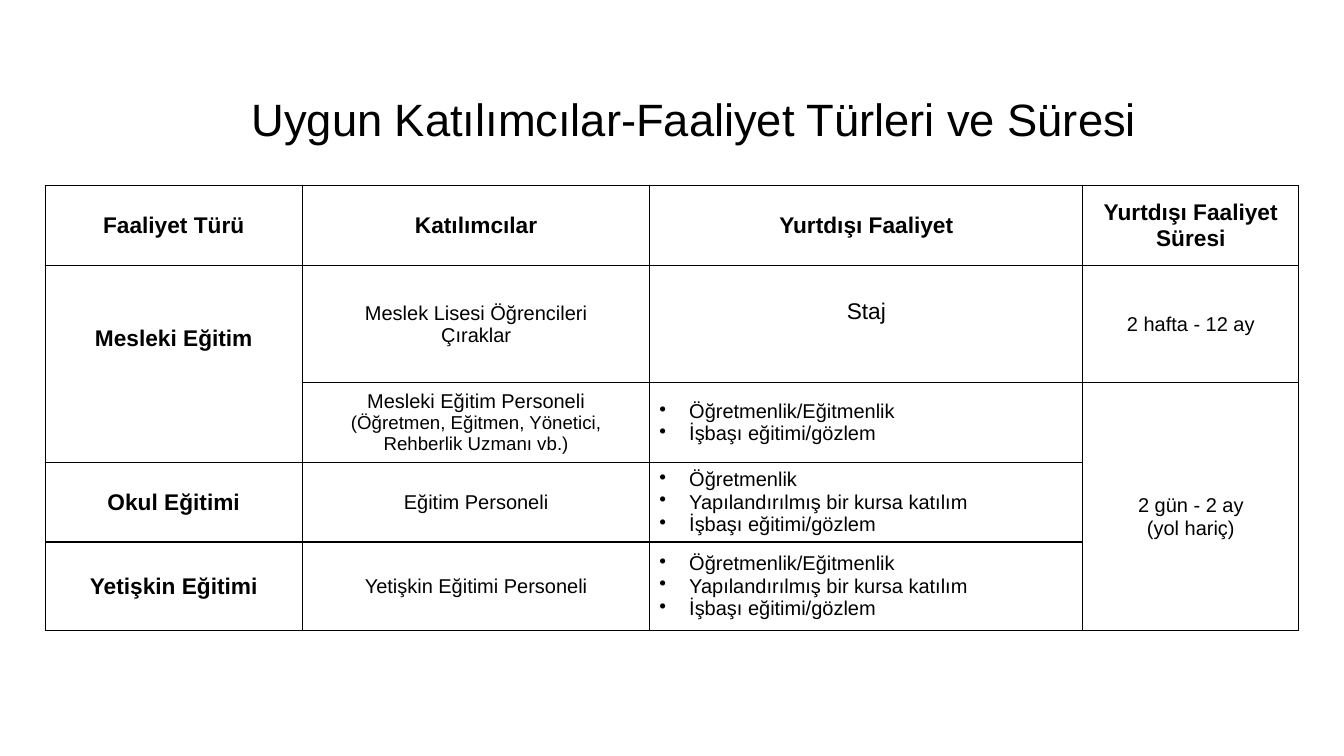
import pptx
import pptx.dml.color
import pptx.enum.text
import pptx.oxml
import pptx.oxml.ns
import pptx.util

Inches, Pt = pptx.util.Inches, pptx.util.Pt
ALIGN = pptx.enum.text.PP_ALIGN
MIDDLE = pptx.enum.text.MSO_ANCHOR.MIDDLE

FONT, INK = "Arial", "000000"
HEADING_SIZE, BODY_SIZE, NOTE_SIZE = 17, 15, 14
BULLET_INDENT = 0.31

TITLE = "Uygun Katılımcılar-Faaliyet Türleri ve Süresi"
HEADERS = ["Faaliyet Türü", "Katılımcılar", "Yurtdışı Faaliyet", "Yurtdışı Faaliyet Süresi"]
TEACHING = "Öğretmenlik/Eğitmenlik"
COURSE = "Yapılandırılmış bir kursa katılım"
SHADOWING = "İşbaşı eğitimi/gözlem"

# Each row: activity type, participants, activities abroad, duration
ROWS = [
    ["Mesleki Eğitim", ["Meslek Lisesi Öğrencileri", "Çıraklar"], ["Staj"], ["2 hafta - 12 ay"]],
    [None, ["Mesleki Eğitim Personeli", "(Öğretmen, Eğitmen, Yönetici, Rehberlik Uzmanı vb.)"],
     [TEACHING, SHADOWING], ["2 gün - 2 ay", "(yol hariç)"]],
    ["Okul Eğitimi", ["Eğitim Personeli"], ["Öğretmenlik", COURSE, SHADOWING], None],
    ["Yetişkin Eğitimi", ["Yetişkin Eğitimi Personeli"], [TEACHING, COURSE, SHADOWING], None],
]
COLUMN_WIDTHS = [2.68, 3.62, 4.51, 2.25]
ROW_HEIGHTS = [0.84, 1.22, 0.83, 0.83, 0.92]
MERGES = [((1, 0), (2, 0)), ((2, 3), (4, 3))]
# Cells whose text sits off centre: (top margin, bottom margin)
MARGINS = {(1, 0): (0, 0.54), (1, 2): (0, 0.27), (2, 3): (0.22, 0)}


def color(value):
    return pptx.dml.color.RGBColor.from_string(value)


def add_text(paragraph, text, size, bold=False, align=ALIGN.CENTER):
    paragraph.alignment = align
    run = paragraph.add_run()
    run.text = text
    run.font.name, run.font.size, run.font.bold = FONT, Pt(size), bold
    run.font.color.rgb = color(INK)


def add_bullet(paragraph):
    properties = paragraph._p.get_or_add_pPr()
    properties.set("marL", str(Inches(BULLET_INDENT)))
    properties.set("indent", str(-Inches(BULLET_INDENT)))
    properties.append(pptx.oxml.parse_xml(
        f'<a:buChar {pptx.oxml.ns.nsdecls("a")} char="•"/>'))


def format_cell(cell, margins):
    cell.fill.background()
    cell.vertical_anchor = MIDDLE
    cell.margin_left = cell.margin_right = Inches(0.1)
    cell.margin_top, cell.margin_bottom = map(Inches, margins)
    properties = cell._tc.get_or_add_tcPr()
    for position, side in enumerate("LRTB"):
        properties.insert(position, pptx.oxml.parse_xml(
            f'<a:ln{side} {pptx.oxml.ns.nsdecls("a")} w="{Pt(1)}">'
            f'<a:solidFill><a:srgbClr val="{INK}"/></a:solidFill></a:ln{side}>'))


def fill_cell(cell, lines, heading, bulleted):
    for index, line in enumerate(lines):
        frame = cell.text_frame
        paragraph = frame.add_paragraph() if index else frame.paragraphs[0]
        if bulleted:
            add_bullet(paragraph)
        size = BODY_SIZE
        if heading or line == "Staj":
            size = HEADING_SIZE
        elif line.startswith("(Öğretmen"):
            size = NOTE_SIZE
        add_text(paragraph, line, size, heading, ALIGN.LEFT if bulleted else ALIGN.CENTER)


def add_title(slide):
    box = slide.shapes.add_textbox(Inches(0.69), Inches(0.88), Inches(13.08), Inches(0.7))
    box.text_frame.word_wrap = True
    box.text_frame.vertical_anchor = MIDDLE
    add_text(box.text_frame.paragraphs[0], TITLE, 34)


def add_activity_table(slide):
    grid = [[[header] for header in HEADERS]]
    grid += [[[kind] if kind else None, *details] for kind, *details in ROWS]
    table = slide.shapes.add_table(
        len(grid), len(HEADERS), Inches(0.47), Inches(1.93),
        Inches(sum(COLUMN_WIDTHS)), Inches(sum(ROW_HEIGHTS))).table
    table.first_row = table.horz_banding = False
    for column, width in zip(table.columns, COLUMN_WIDTHS):
        column.width = Inches(width)
    for row, height in zip(table.rows, ROW_HEIGHTS):
        row.height = Inches(height)
    for start, end in MERGES:
        table.cell(*start).merge(table.cell(*end))
    for r, row in enumerate(grid):
        for c, lines in enumerate(row):
            cell = table.cell(r, c)
            format_cell(cell, MARGINS.get((r, c), (0, 0)))
            fill_cell(cell, lines or [], heading=r == 0 or c == 0, bulleted=r > 1 and c == 2)


def main():
    deck = pptx.Presentation()
    deck.slide_width, deck.slide_height = Inches(14), Inches(7.88)
    slide = deck.slides.add_slide(deck.slide_layouts[6])
    add_title(slide)
    add_activity_table(slide)
    deck.save("out.pptx")


if __name__ == "__main__":
    main()
